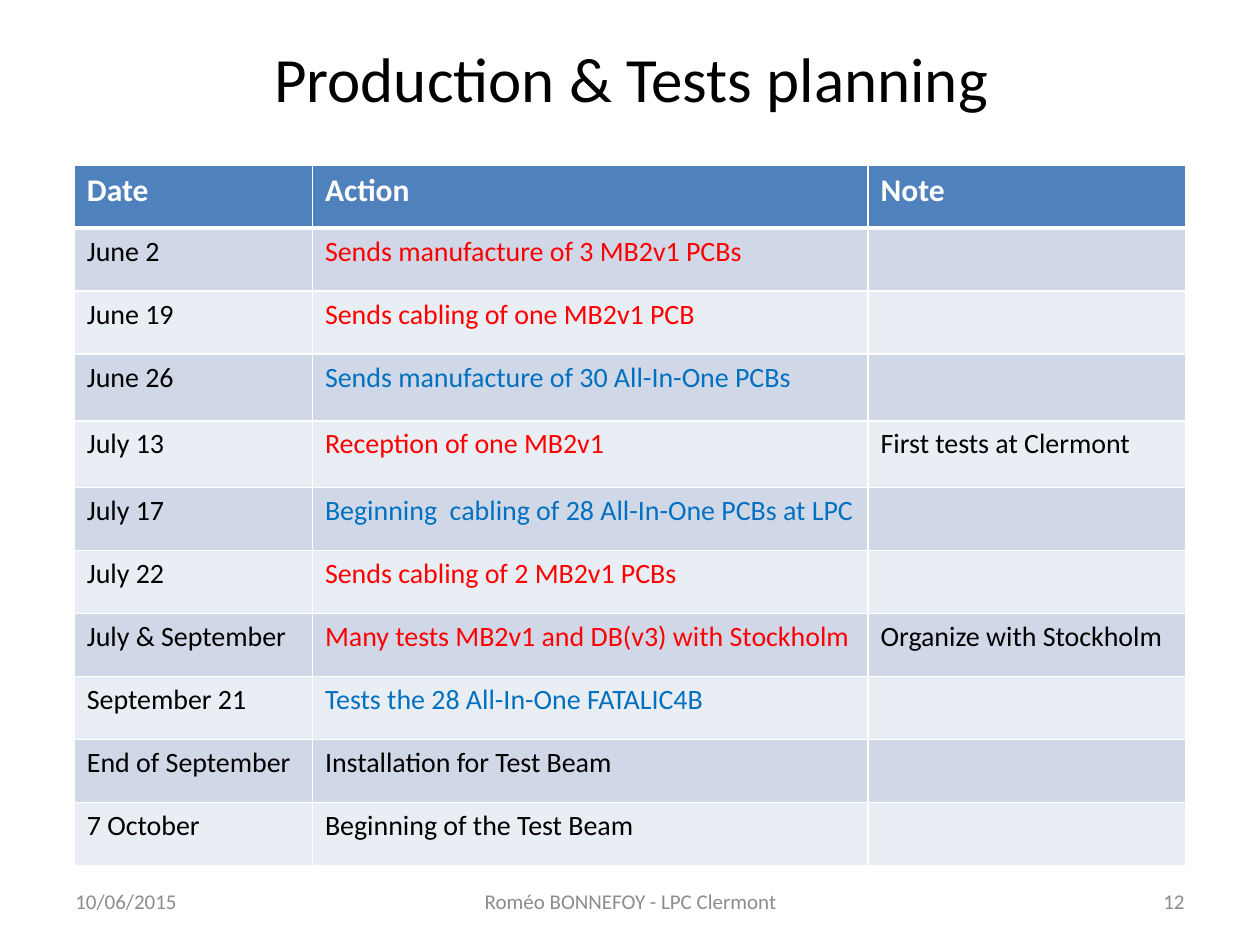
from lxml.etree import SubElement
from pptx import Presentation
from pptx.dml.color import RGBColor
from pptx.enum.text import MSO_ANCHOR, PP_ALIGN
from pptx.oxml.ns import qn
from pptx.util import Inches, Pt

BLACK = RGBColor(0x00, 0x00, 0x00)
WHITE = RGBColor(0xFF, 0xFF, 0xFF)
GREY = RGBColor(0x8C, 0x8C, 0x8C)
RED = RGBColor(0xFF, 0x00, 0x00)
BLUE = RGBColor(0x00, 0x70, 0xC0)
HEADER_FILL = RGBColor(0x4F, 0x81, 0xBD)
BAND_FILLS = (RGBColor(0xE9, 0xED, 0xF4), RGBColor(0xD0, 0xD8, 0xE8))

TITLE_FONT = {"name": "Calibri", "size": Pt(36), "bold": False}
HEADER_FONT = {"name": "Calibri", "size": Pt(18), "bold": True}
BODY_FONT = {"name": "Calibri", "size": Pt(16), "bold": False}
FOOTER_FONT = {"name": "Calibri", "size": Pt(12), "bold": False}

COLUMN_WIDTHS = (1.89, 4.41, 2.52)
ROW_HEIGHT = 0.5
TALL_ROWS = {3: 0.53, 4: 0.53}
HEADINGS = ("Date", "Action", "Note")
PLANNING = (
    ("June 2", "Sends manufacture of 3 MB2v1 PCBs", "", RED),
    ("June 19", "Sends cabling of one MB2v1 PCB", "", RED),
    ("June 26", "Sends manufacture of 30 All-In-One PCBs", "", BLUE),
    ("July 13", "Reception of one MB2v1", "First tests at Clermont", RED),
    ("July 17", "Beginning  cabling of 28 All-In-One PCBs at LPC", "", BLUE),
    ("July 22", "Sends cabling of 2 MB2v1 PCBs", "", RED),
    ("July & September", "Many tests MB2v1 and DB(v3) with Stockholm",
     "Organize with Stockholm", RED),
    ("September 21", "Tests the 28 All-In-One FATALIC4B", "", BLUE),
    ("End of September", "Installation for Test Beam", "", BLACK),
    ("7 October", "Beginning of the Test Beam", "", BLACK),
)
FOOTERS = (
    ("10/06/2015", 0.5, 2.33, PP_ALIGN.LEFT),
    ("Roméo BONNEFOY - LPC Clermont", 3.42, 3.17, PP_ALIGN.CENTER),
    ("12", 7.17, 2.33, PP_ALIGN.RIGHT),
)


def set_attributes(target, values):
    """Set each named attribute of the target."""
    for name, value in values.items():
        setattr(target, name, value)


def write_text(frame, text, font, color, alignment=PP_ALIGN.LEFT):
    """Write one formatted paragraph into a text frame."""
    para = frame.paragraphs[0]
    para.alignment = alignment
    span = para.add_run()
    span.text = text
    set_attributes(span.font, font)
    span.font.color.rgb = color


def add_title(page, text):
    """Place and fill the title placeholder."""
    box = page.shapes.title
    set_attributes(box, {"left": Inches(0.51), "top": Inches(0.24),
                         "width": Inches(9), "height": Inches(0.75)})
    box.text_frame.vertical_anchor = MSO_ANCHOR.MIDDLE
    write_text(box.text_frame, text, TITLE_FONT, BLACK, PP_ALIGN.CENTER)


def add_footer(page, text, left, width, alignment):
    """Add one text box on the footer line."""
    box = page.shapes.add_textbox(Inches(left), Inches(6.95), Inches(width), Inches(0.4))
    set_attributes(box.text_frame, {"word_wrap": True, "vertical_anchor": MSO_ANCHOR.MIDDLE})
    write_text(box.text_frame, text, FOOTER_FONT, GREY, alignment)


def set_borders(cell, widths):
    """Draw white cell borders of the given point widths by side."""
    properties = cell._tc.get_or_add_tcPr()
    for side, width in widths.items():
        line = SubElement(properties, qn(f"a:ln{side}"), w=str(Pt(width)))
        fill = SubElement(line, qn("a:solidFill"))
        SubElement(fill, qn("a:srgbClr"), val=str(WHITE))


def fill_row(table, row, texts, colors, font, fill):
    """Format and fill one table row."""
    widths = {"L": 1, "R": 1, "T": 3 if row == 1 else 1, "B": 3 if row == 0 else 1}
    for column, (text, color) in enumerate(zip(texts, colors)):
        cell = table.cell(row, column)
        set_borders(cell, widths)
        cell.fill.solid()
        cell.fill.fore_color.rgb = fill
        if text:
            write_text(cell.text_frame, text, font, color)


def add_planning_table(page):
    """Add the table of dates, actions and notes."""
    heights = [TALL_ROWS.get(row, ROW_HEIGHT) for row in range(len(PLANNING) + 1)]
    table = page.shapes.add_table(
        len(heights), len(COLUMN_WIDTHS), Inches(0.59), Inches(1.31),
        Inches(sum(COLUMN_WIDTHS)), Inches(sum(heights))).table
    for column, width in zip(table.columns, COLUMN_WIDTHS):
        column.width = Inches(width)
    for row, height in zip(table.rows, heights):
        row.height = Inches(height)
    fill_row(table, 0, HEADINGS, (WHITE,) * 3, HEADER_FONT, HEADER_FILL)
    for row, (*texts, color) in enumerate(PLANNING, start=1):
        fill_row(table, row, texts, (BLACK, color, BLACK), BODY_FONT, BAND_FILLS[row % 2])


def main():
    """Build and save the planning slide."""
    deck = Presentation()
    set_attributes(deck, {"slide_width": Inches(10), "slide_height": Inches(7.5)})
    page = deck.slides.add_slide(deck.slide_layouts[5])
    add_title(page, "Production & Tests planning")
    for footer in FOOTERS:
        add_footer(page, *footer)
    add_planning_table(page)
    deck.save("out.pptx")


if __name__ == "__main__":
    main()
